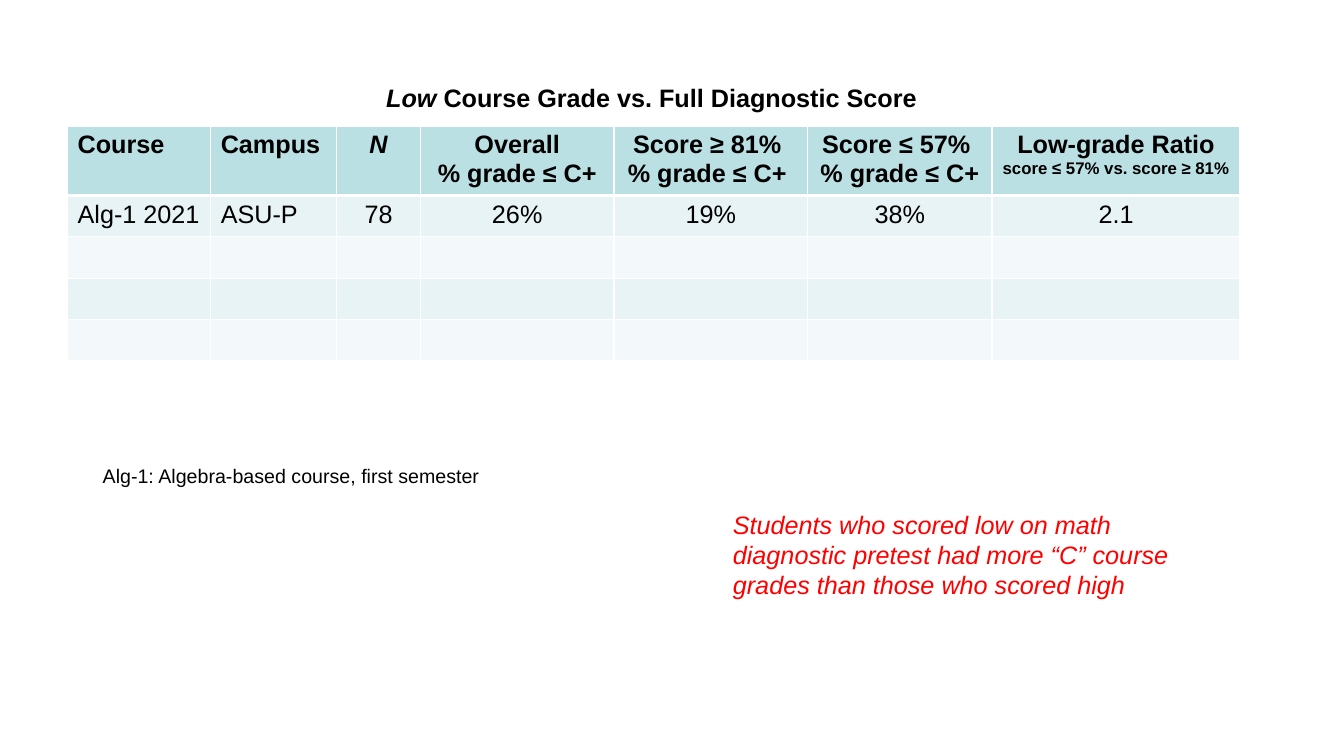
"""Build the slide on low course grades against diagnostic scores."""
from lxml import etree
from pptx import Presentation
from pptx.dml.color import RGBColor
from pptx.enum.text import MSO_ANCHOR, PP_ALIGN
from pptx.oxml.ns import qn
from pptx.util import Inches, Pt

TOP = MSO_ANCHOR.TOP
LEFT, MID = PP_ALIGN.LEFT, PP_ALIGN.CENTER
FONT = "Arial"
HUES = {
    "head": "BBE0E3",
    "odd": "E7F3F4",
    "even": "F3F9FA",
    "rule": "FFFFFF",
    "text": "000000",
    "note": "FF0000",
}
WIDTHS = [1.42, 1.25, 0.83, 1.92, 1.92, 1.83, 2.46]
HEIGHTS = [0.69] + [0.41] * 4
HEADS = [
    [[("Course", {})]],
    [[("Campus", {})]],
    [[("N", {"italic": True})]],
    [[("Overall", {})], [("% grade ≤ C+", {})]],
    [[("Score ≥ 81% ", {})], [("% grade ≤ C+ ", {})]],
    [[("Score ≤ 57% ", {})], [("% grade ≤ C+", {})]],
    [[("Low-grade Ratio", {}), (" score ≤ 57% vs. score ≥ 81%", {"size": 12})]],
]
DATA = ["Alg-1 2021", "ASU-P", "78", "26%", "19%", "38%", "2.1"]


def add_run(para, text, size=18, hue="text", bold=False, italic=False):
    """Add one styled run to a paragraph."""
    run = para.add_run()
    run.text = text
    font = run.font
    font.name, font.size = FONT, Pt(size)
    font.bold, font.italic = bold, italic
    font.color.rgb = RGBColor.from_string(HUES[hue])


def fill_text(frame, paras, align=LEFT, **style):
    """Write paragraphs of runs into a text frame."""
    for num, runs in enumerate(paras):
        para = frame.add_paragraph() if num else frame.paragraphs[0]
        para.alignment = align
        for text, extra in runs:
            add_run(para, text, **{**style, **extra})


def add_note(slide, box, text, **style):
    """Add a wrapped text box holding one run."""
    frame = slide.shapes.add_textbox(*map(Inches, box)).text_frame
    frame.word_wrap = True
    fill_text(frame, [[(text, style)]])


def set_title(slide, box, runs):
    """Place the title and write its runs."""
    title = slide.shapes.title
    title.left, title.top, title.width, title.height = map(Inches, box)
    frame = title.text_frame
    frame.word_wrap = True
    frame.vertical_anchor = TOP
    fill_text(frame, [runs], bold=True)


def set_cell(cell, hue, edges):
    """Draw the four cell borders, then fill the cell."""
    props = cell._tc.get_or_add_tcPr()
    for side, width in edges.items():
        line = etree.SubElement(props, qn(f"a:ln{side}"), w=str(Pt(width)))
        solid = etree.SubElement(line, qn("a:solidFill"))
        etree.SubElement(solid, qn("a:srgbClr"), val=HUES["rule"])
    cell.fill.solid()
    cell.fill.fore_color.rgb = RGBColor.from_string(HUES[hue])


def add_grid(slide, left, top):
    """Add the table of grades."""
    size = map(Inches, (left, top, sum(WIDTHS), sum(HEIGHTS)))
    table = slide.shapes.add_table(len(HEIGHTS), len(WIDTHS), *size).table
    for col, width in zip(table.columns, WIDTHS):
        col.width = Inches(width)
    rows = [HEADS, [[[(text, {})]] for text in DATA]]
    for num, height in enumerate(HEIGHTS):
        table.rows[num].height = Inches(height)
        hue = "head" if num == 0 else "odd" if num % 2 else "even"
        edges = {"L": 1, "R": 1, "T": 3 if num == 1 else 1, "B": 1 if num else 3}
        for cell in table.rows[num].cells:
            set_cell(cell, hue, edges)
        if num < len(rows):
            for pos, paras in enumerate(rows[num]):
                align = LEFT if pos < 2 else MID
                fill_text(table.cell(num, pos).text_frame, paras, align, bold=num == 0)


def main():
    """Build and save the deck."""
    deck = Presentation()
    deck.slide_width, deck.slide_height = Inches(13.33), Inches(7.5)
    slide = deck.slides.add_slide(deck.slide_layouts.get_by_name("Title Only"))
    set_title(slide, (3.73, 0.77, 5.5, 0.42), [
        ("Low", {"italic": True}),
        (" Course Grade vs. Full Diagnostic Score", {}),
    ])
    add_grid(slide, 0.67, 1.25)
    add_note(slide, (0.92, 4.55, 6.25, 0.34),
             "Alg-1: Algebra-based course, first semester", size=14)
    add_note(slide, (7.17, 5, 4.92, 1.01),
             "Students who scored low on math diagnostic pretest had more “C” "
             "course grades than those who scored high", hue="note", italic=True)
    deck.save("out.pptx")


if __name__ == "__main__":
    main()
